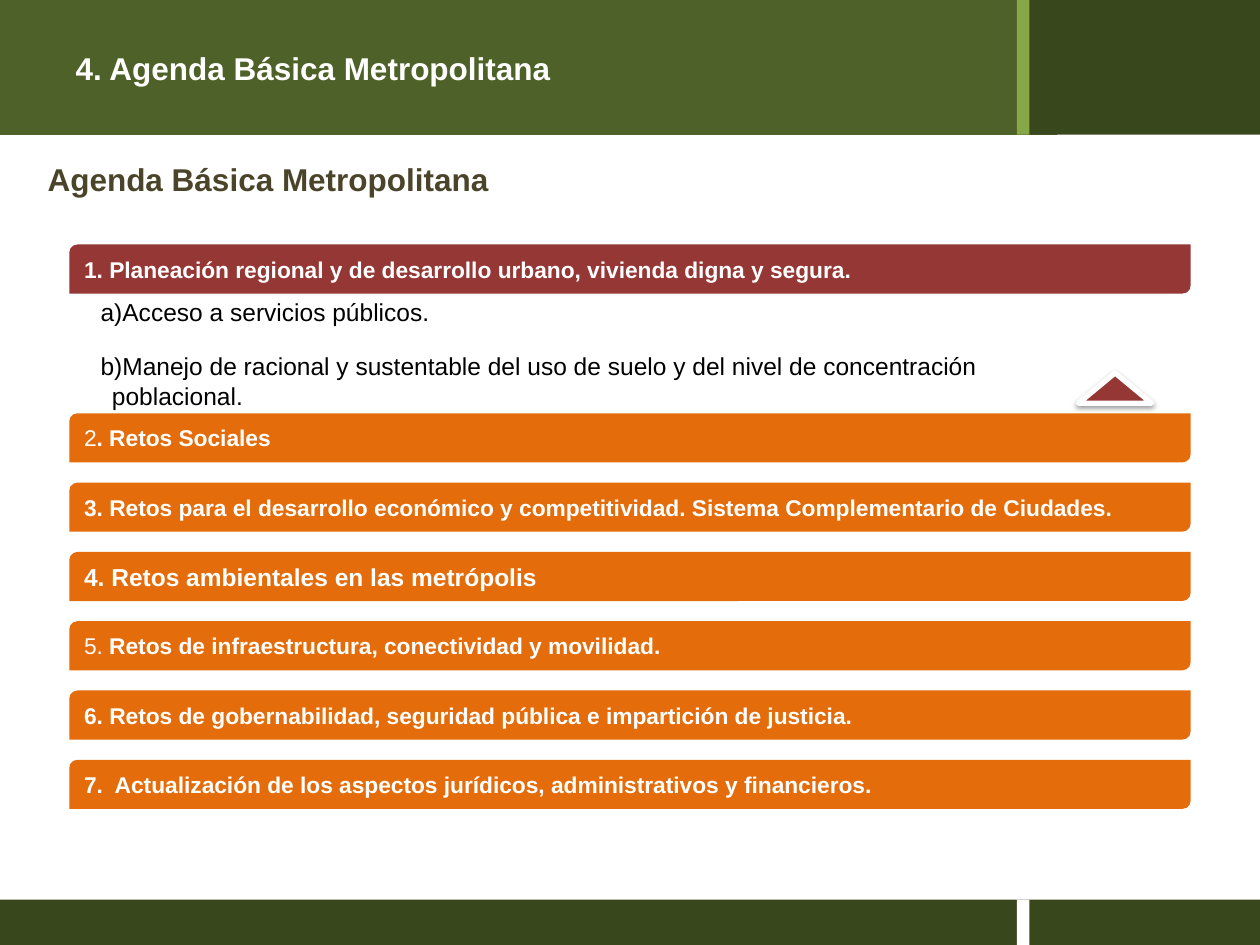
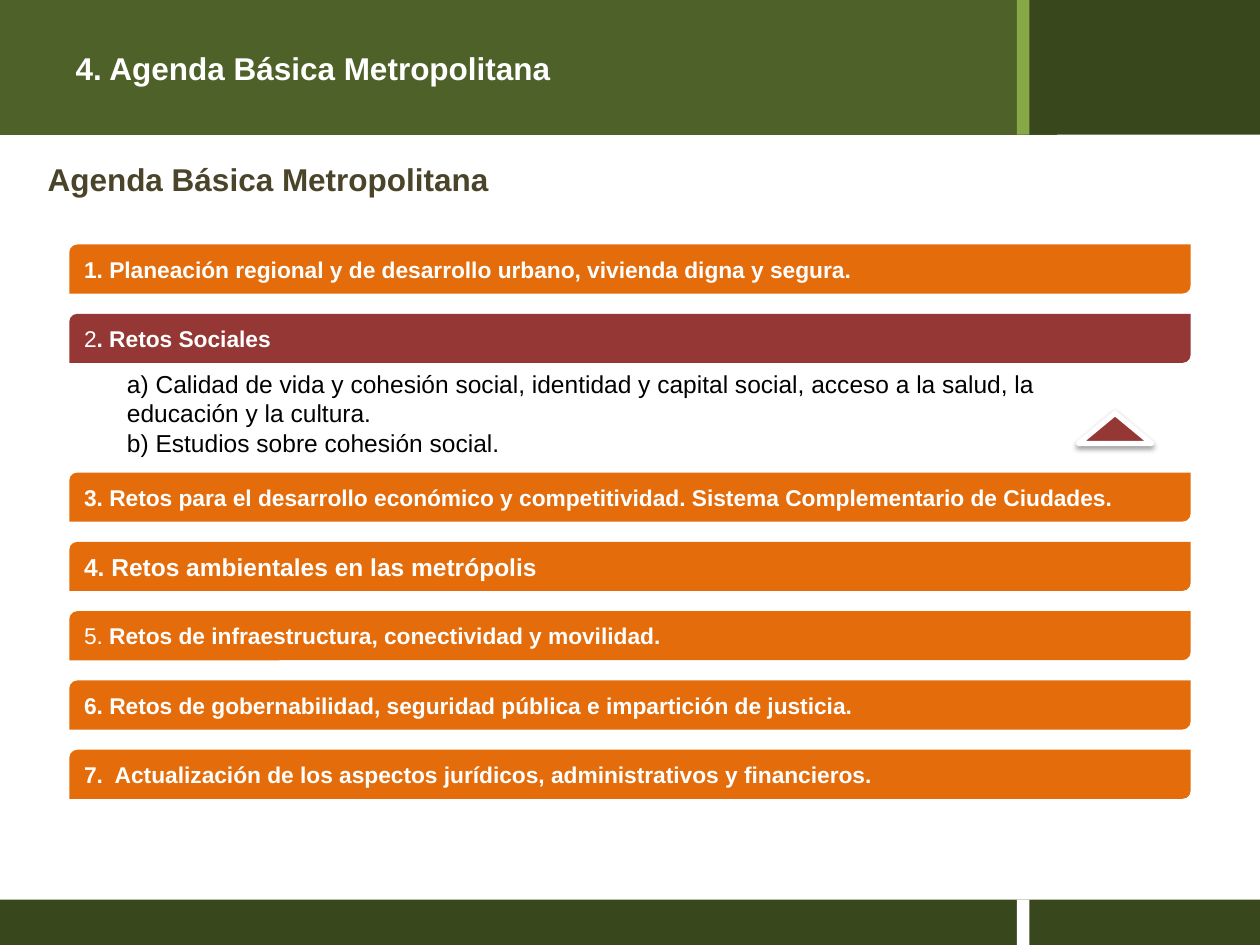
from lxml import etree
from pptx import Presentation
from pptx.dml.color import RGBColor as Rgb
from pptx.enum.shapes import MSO_SHAPE as Kind
from pptx.enum.text import MSO_ANCHOR as Anchor, MSO_AUTO_SIZE as Auto, PP_ALIGN as Align
from pptx.oxml import parse_xml
from pptx.oxml.ns import nsdecls, qn
from pptx.util import Inches, Pt

WHITE = Rgb(0xFF, 0xFF, 0xFF)
BLACK = Rgb(0x00, 0x00, 0x00)
DARK = Rgb(0x39, 0x47, 0x1D)
GREEN = Rgb(0x4E, 0x61, 0x28)
LIME = Rgb(0x87, 0xA8, 0x46)
ORANGE = Rgb(0xE4, 0x6C, 0x0A)
RED = Rgb(0x95, 0x37, 0x35)
BROWN = Rgb(0x4A, 0x45, 0x2A)

FONT = "Arial"
TOP, STEP = 1.94, 0.55
HEAD, FOOT = 1.07, 7.14

TOPICS = [
    ("", "1. Planeación regional y de desarrollo urbano, vivienda digna y segura.", 13),
    ("2", ". Retos Sociales", 13),
    ("", "3. Retos para el desarrollo económico y competitividad. "
         "Sistema Complementario de Ciudades.", 13),
    ("", "4. Retos ambientales en las metrópolis", 14),
    ("5. ", "Retos de infraestructura, conectividad y movilidad.", 13),
    ("", "6. Retos de gobernabilidad, seguridad pública e impartición de justicia.", 13),
    ("", "7.  Actualización de los aspectos jurídicos, administrativos y financieros.", 13),
]


def write(frame, *lines, size=14, color=BLACK, bold=False, letter=False, gap=0,
          anchor=Anchor.TOP, wrap=True):
    frame.word_wrap = wrap
    frame.auto_size = Auto.NONE
    frame.vertical_anchor = anchor
    for i, line in enumerate(lines):
        para = frame.paragraphs[0] if i == 0 else frame.add_paragraph()
        if letter:
            props = para._p.get_or_add_pPr()
            props.set("marL", str(Inches(0.59)))
            props.set("indent", str(Inches(-0.09)))
            mark = etree.SubElement(props, qn("a:buAutoNum"))
            mark.set("type", "alphaLcParenR")
        para.alignment = Align.LEFT
        if i and gap:
            para.space_before = Pt(gap)
        parts = [(line, bold)] if isinstance(line, str) else line
        for text, heavy in parts:
            run = para.add_run()
            run.text = text
            font = run.font
            font.name, font.size, font.bold = FONT, Pt(size), heavy
            font.color.rgb = color


class Deck:
    def __init__(self):
        self.show = Presentation()
        self.show.slide_width = Inches(10)
        self.show.slide_height = Inches(7.5)
        self.slide = None

    def start(self, title, label):
        self.slide = self.show.slides.add_slide(self.show.slide_layouts[5])
        head = self.slide.shapes.title
        head.left, head.top = Inches(0), Inches(0)
        head.width, head.height = Inches(8.39), Inches(HEAD)
        head.fill.solid()
        head.fill.fore_color.rgb = GREEN
        frame = head.text_frame
        frame.margin_left = Inches(0.6)
        write(frame, title, size=18, color=WHITE, bold=True, anchor=Anchor.MIDDLE)
        foot = 7.5 - FOOT
        self.block(0, FOOT, 10, foot, DARK)
        self.block(8.12, 0, 1.88, HEAD, DARK)
        self.block(8.07, 0, 0.1, HEAD, LIME)
        self.block(8.07, FOOT, 0.1, foot, WHITE)
        self.text(0.28, 1.22, 3.74, 0.4, label, size=18, color=BROWN,
                  bold=True, wrap=False)

    def block(self, x, y, wide, high, color, kind=Kind.RECTANGLE):
        shape = self.slide.shapes.add_shape(
            kind, Inches(x), Inches(y), Inches(wide), Inches(high))
        shape.shadow.inherit = False
        shape.fill.solid()
        shape.fill.fore_color.rgb = color
        shape.line.fill.background()
        return shape

    def text(self, x, y, wide, high, *lines, **style):
        box = self.slide.shapes.add_textbox(
            Inches(x), Inches(y), Inches(wide), Inches(high))
        write(box.text_frame, *lines, **style)

    def bars(self, chosen, room):
        for i, (plain, heavy, size) in enumerate(TOPICS):
            y = TOP + i * STEP + (room if i > chosen else 0)
            bar = self.block(0.55, y, 8.9, 0.39, RED if i == chosen else ORANGE,
                             Kind.ROUND_2_DIAG_RECTANGLE)
            parts = [(plain, False)] if plain else []
            write(bar.text_frame, parts + [(heavy, True)], size=size, color=WHITE,
                  anchor=Anchor.MIDDLE)

    def arrow(self, y):
        shape = self.block(8.56, y, 0.58, 0.24, RED, Kind.ISOSCELES_TRIANGLE)
        shape.line.color.rgb = WHITE
        shape.line.width = Pt(3)
        glow = shape._element.spPr.find(qn("a:effectLst"))
        glow.append(parse_xml(
            f'<a:outerShdw {nsdecls("a")} blurRad="{Pt(3.1)}" dist="{Pt(1.6)}" '
            'dir="5400000" rotWithShape="0"><a:srgbClr val="000000">'
            '<a:alpha val="38000"/></a:srgbClr></a:outerShdw>'))


def main():
    deck = Deck()
    name = "Agenda Básica Metropolitana"

    deck.start("4. " + name, name)
    deck.bars(0, 0.79)
    deck.text(0.2, 2.31, 8.11, 1.01, "Acceso a servicios públicos.",
              "Manejo de racional y sustentable del uso de suelo y del nivel de "
              "concentración poblacional.", letter=True, gap=14)
    deck.arrow(2.96)

    deck.start("4. " + name, name)
    deck.bars(1, 0.71)
    deck.text(0.91, 2.88, 7.64, 0.81,
              "a) Calidad de vida y cohesión social, identidad y capital social, "
              "acceso a la salud, la educación y la cultura.",
              "b) Estudios sobre cohesión social.")
    deck.arrow(3.28)

    deck.show.save("out.pptx")


if __name__ == "__main__":
    main()
